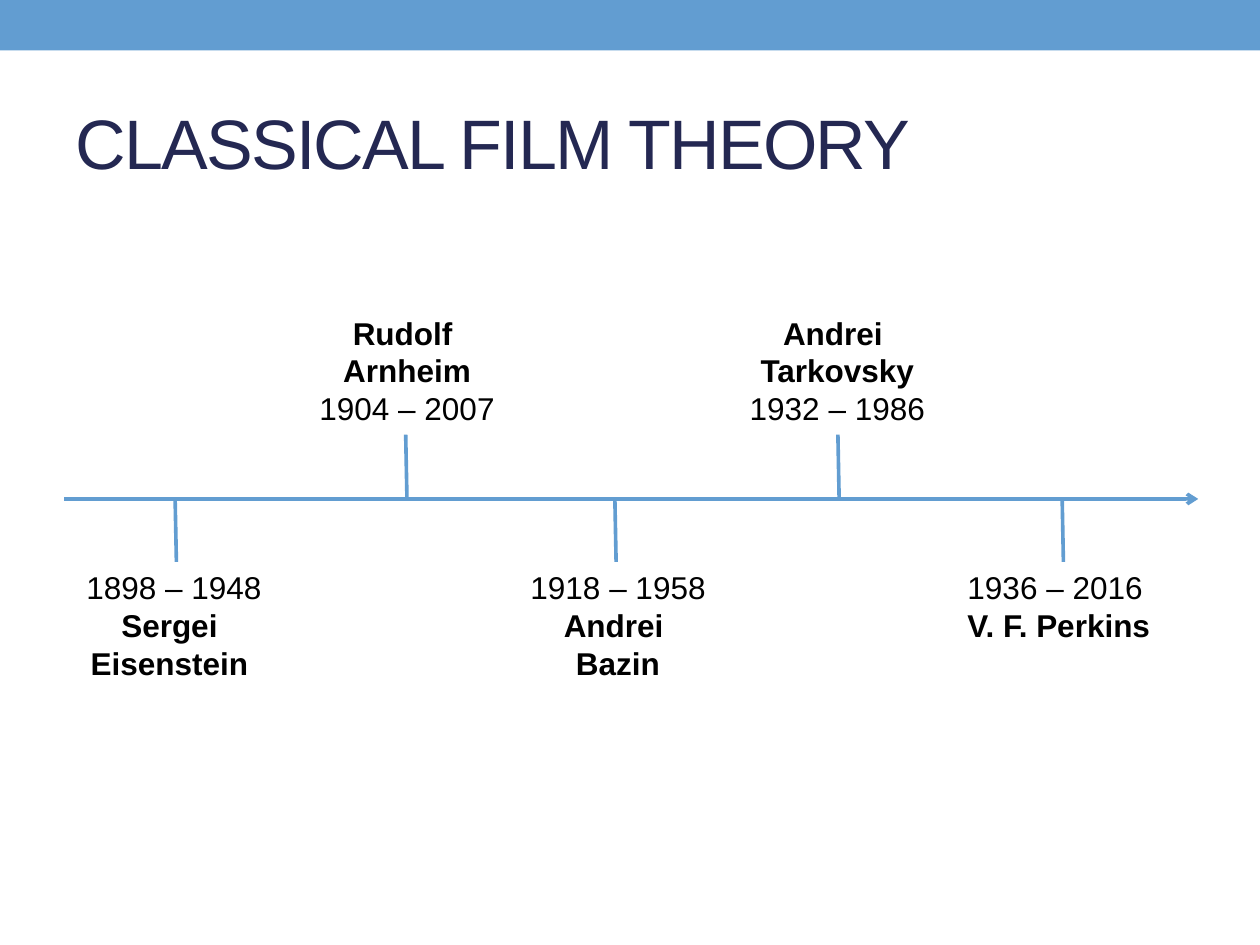
from lxml.etree import SubElement
from pptx import Presentation
from pptx.dml.color import RGBColor
from pptx.enum.shapes import MSO_CONNECTOR, MSO_SHAPE
from pptx.enum.text import MSO_ANCHOR, MSO_AUTO_SIZE, PP_ALIGN
from pptx.oxml.ns import qn
from pptx.util import Inches, Pt

FONT = "Arial"
BLUE, NAVY, BLACK = "629DD1", "242852", "000000"
AXIS_Y, TICK_TOP, TICK_BOTTOM = 3.96, 3.45, 4.46
ABOVE_TOP = 2.44
TICK_SLANT = 0.01

# Lines, label left, label width, tick x, above the axis, alignment
THEORISTS = [
    (["1898 – 1948", "Sergei ", "Eisenstein "], 0.55, 1.66, 1.39, False, PP_ALIGN.CENTER),
    (["Rudolf ", "Arnheim", "1904 – 2007"], 2.39, 1.68, 3.22, True, PP_ALIGN.CENTER),
    (["1918 – 1958", "Andrei ", "Bazin"], 4.07, 1.67, 4.88, False, PP_ALIGN.CENTER),
    (["Andrei ", "Tarkovsky", "1932 – 1986"], 5.79, 1.71, 6.65, True, PP_ALIGN.CENTER),
    (["1936 – 2016", "V. F. Perkins"], 7.58, 1.72, 8.43, False, PP_ALIGN.LEFT),
]


def rgb(hex_color):
    return RGBColor.from_string(hex_color)


def style_run(run, size, color, bold=False):
    run.font.name = FONT
    run.font.size = Pt(size)
    run.font.bold = bold
    run.font.color.rgb = rgb(color)


def add_banner(slide):
    banner = slide.shapes.add_shape(MSO_SHAPE.RECTANGLE, 0, 0, Inches(10), Inches(0.4))
    banner.shadow.inherit = False
    banner.fill.solid()
    banner.fill.fore_color.rgb = rgb(BLUE)
    banner.line.fill.background()


def set_title(slide, text):
    title = slide.shapes.title
    title.left, title.top = Inches(0.5), Inches(0.58)
    title.width, title.height = Inches(9), Inches(1.08)
    frame = title.text_frame
    frame.text = text
    frame.vertical_anchor = MSO_ANCHOR.MIDDLE
    heading = frame.paragraphs[0]
    heading.alignment = PP_ALIGN.LEFT
    style_run(heading.runs[0], 40, NAVY)
    # Letter spacing of -1 pt
    heading.runs[0].font._element.set("spc", "-100")


def add_line(slide, x1, y1, x2, y2, arrow=False):
    line = slide.shapes.add_connector(
        MSO_CONNECTOR.STRAIGHT, Inches(x1), Inches(y1), Inches(x2), Inches(y2))
    line.line.color.rgb = rgb(BLUE)
    line.line.width = Pt(2.08)
    if arrow:
        SubElement(line.line._get_or_add_ln(), qn("a:tailEnd"), type="arrow")
    SubElement(line._element.spPr, qn("a:effectLst"))


def add_label(slide, lines, left, top, width, alignment):
    height = 0.11 + 0.3 * len(lines)
    label = slide.shapes.add_textbox(
        Inches(left), Inches(top), Inches(width), Inches(height))
    frame = label.text_frame
    frame.word_wrap = True
    frame.auto_size = MSO_AUTO_SIZE.SHAPE_TO_FIT_TEXT
    frame.text = "\n".join(lines)
    for paragraph in frame.paragraphs:
        paragraph.alignment = alignment
        is_years = "–" in paragraph.text
        style_run(paragraph.runs[0], 18, BLACK, bold=not is_years)


def add_theorist(slide, lines, left, width, tick_x, above, alignment):
    label_top = ABOVE_TOP if above else TICK_BOTTOM
    tick_start, tick_end = (TICK_TOP, AXIS_Y) if above else (AXIS_Y, TICK_BOTTOM)
    add_label(slide, lines, left, label_top, width, alignment)
    add_line(slide, tick_x, tick_start, tick_x + TICK_SLANT, tick_end)


def main():
    presentation = Presentation()
    presentation.slide_width, presentation.slide_height = Inches(10), Inches(7.5)
    slide = presentation.slides.add_slide(presentation.slide_layouts[5])

    # Heading
    add_banner(slide)
    set_title(slide, "CLASSICAL FILM THEORY")

    # Timeline
    add_line(slide, 0.51, AXIS_Y, 9.51, AXIS_Y, arrow=True)
    for theorist in THEORISTS:
        add_theorist(slide, *theorist)

    presentation.save("out.pptx")


if __name__ == "__main__":
    main()
